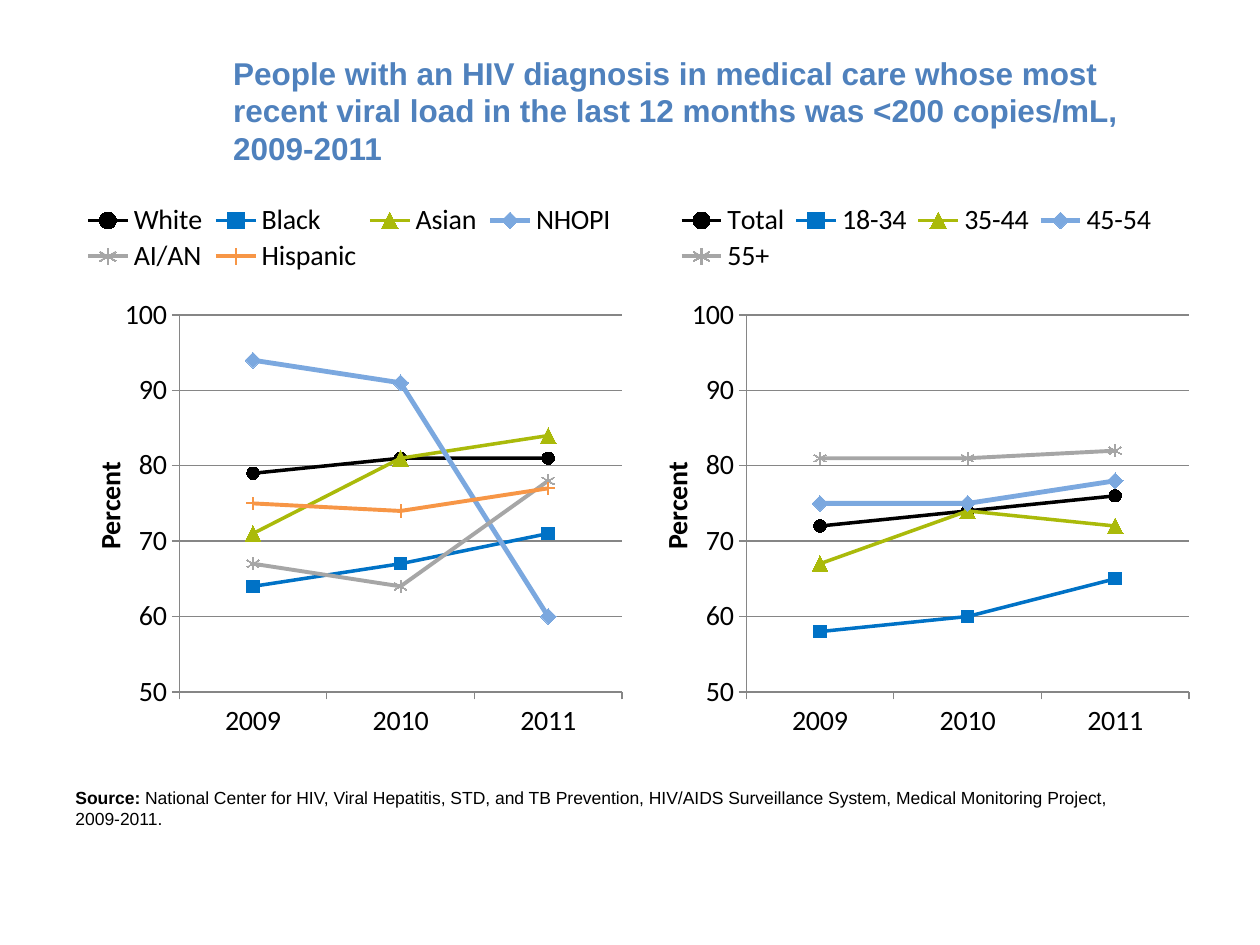
from dataclasses import dataclass
from typing import NamedTuple

import pptx
import pptx.chart.data
import pptx.dml.color
import pptx.enum.chart
import pptx.enum.text
import pptx.oxml
import pptx.oxml.ns
import pptx.util

EMU_PER_PX = 9144  # 100 px to the inch
YEARS = ["2009", "2010", "2011"]
AXIS_FONT = {"name": "Calibri", "size": pptx.util.Pt(16), "bold": False}
MARKER = pptx.enum.chart.XL_MARKER_STYLE


class Box(NamedTuple):
    x: int
    y: int
    w: int
    h: int


class SeriesStyle(NamedTuple):
    color: str
    width: float
    marker: MARKER
    size: int
    filled: bool = True


@dataclass
class LinePanel:
    box: Box
    legend: dict[str, float]
    series: dict[str, list[int]]


STYLES = [
    SeriesStyle("000000", 2, MARKER.CIRCLE, 7),
    SeriesStyle("0072C6", 2, MARKER.SQUARE, 7),
    SeriesStyle("AABA0A", 2, MARKER.TRIANGLE, 9),
    SeriesStyle("7BA8DF", 2.75, MARKER.DIAMOND, 9),
    SeriesStyle("A6A6A6", 2.25, MARKER.STAR, 7, False),
    SeriesStyle("F79646", 2.25, MARKER.PLUS, 7, False),
]

PANELS = [
    LinePanel(
        Box(50, 160, 450, 450),
        {"x": 0.02, "y": 0, "w": 0.97, "h": 0.13},
        {
            "White": [79, 81, 81],
            "Black": [64, 67, 71],
            "Asian": [71, 81, 84],
            "NHOPI": [94, 91, 60],
            "AI/AN": [67, 64, 78],
            "Hispanic": [75, 74, 77],
        },
    ),
    LinePanel(
        Box(500, 160, 450, 450),
        {"x": 0.07, "y": 0, "w": 0.87, "h": 0.13},
        {
            "Total": [72, 74, 76],
            "18-34": [58, 60, 65],
            "35-44": [67, 74, 72],
            "45-54": [75, 75, 78],
            "55+": [81, 81, 82],
        },
    ),
]


def px(n: int) -> int:
    return pptx.util.Emu(n * EMU_PER_PX)


def rgb(color: str) -> pptx.dml.color.RGBColor:
    return pptx.dml.color.RGBColor.from_string(color)


def set_attrs(obj, values: dict) -> None:
    for name, value in values.items():
        setattr(obj, name, value)


def set_font(font, values: dict, color: str = "000000") -> None:
    set_attrs(font, values)
    font.color.rgb = rgb(color)


def set_line(line, color: str, width: float) -> None:
    line.color.rgb = rgb(color)
    line.width = pptx.util.Pt(width)


def place(sp, box: Box) -> None:
    set_attrs(sp, dict(zip(("left", "top", "width", "height"), map(px, box))))


def set_layout(element, index: int, fractions: dict, inner: bool = False) -> None:
    """Position a chart part by fractions of the chart area."""
    for old in element.findall(pptx.oxml.ns.qn("c:layout")):
        element.remove(old)
    modes = "".join(f'<c:{k}Mode val="edge"/>' for k in "xy")
    values = "".join(f'<c:{k} val="{v}"/>' for k, v in fractions.items())
    target = '<c:layoutTarget val="inner"/>' if inner else ""
    element.insert(index, pptx.oxml.parse_xml(
        f'<c:layout {pptx.oxml.ns.nsdecls("c")}><c:manualLayout>'
        f"{target}{modes}{values}</c:manualLayout></c:layout>"))


def style_series(series, style: SeriesStyle) -> None:
    series.smooth = False
    set_line(series.format.line, style.color, style.width)
    marker = series.marker
    set_attrs(marker, {"style": style.marker, "size": style.size})
    set_line(marker.format.line, style.color, 0.75)
    if style.filled:
        marker.format.fill.solid()
        marker.format.fill.fore_color.rgb = rgb(style.color)
    else:
        marker.format.fill.background()


def style_axes(chart) -> None:
    for axis in (chart.category_axis, chart.value_axis):
        axis.major_tick_mark = pptx.enum.chart.XL_TICK_MARK.OUTSIDE
        set_font(axis.tick_labels.font, AXIS_FONT)
        set_line(axis.format.line, "868686", 0.75)
    axis = chart.value_axis
    set_attrs(axis, {"minimum_scale": 50, "maximum_scale": 100,
                     "major_unit": 10, "has_major_gridlines": True})
    set_line(axis.major_gridlines.format.line, "868686", 0.75)
    set_attrs(axis.tick_labels, {"number_format": "0",
                                 "number_format_is_linked": False})
    p = axis.axis_title.text_frame.paragraphs[0]
    r = p.add_run()
    r.text = "Percent"
    set_font(r.font, AXIS_FONT | {"bold": True})
    set_layout(axis.axis_title._element, 1, {"x": 0.04, "y": 0.45})


def add_line_panel(s, panel: LinePanel) -> None:
    data = pptx.chart.data.CategoryChartData(number_format="0")
    data.categories = YEARS
    for name, values in panel.series.items():
        data.add_series(name, values)
    chart = s.shapes.add_chart(pptx.enum.chart.XL_CHART_TYPE.LINE_MARKERS,
                               *map(px, panel.box), data).chart
    set_attrs(chart, {"has_title": False, "has_legend": True})
    set_font(chart.font, {"name": "Arial", "size": pptx.util.Pt(10)})
    chart.plots[0].vary_by_categories = False
    for series, style in zip(chart.plots[0].series, STYLES):
        style_series(series, style)
    style_axes(chart)

    # Legend and plot area
    legend = chart.legend
    set_attrs(legend, {"position": pptx.enum.chart.XL_LEGEND_POSITION.TOP,
                       "include_in_layout": False})
    set_font(legend.font, AXIS_FONT)
    set_layout(legend._element, 1, panel.legend)
    set_layout(chart._chartSpace.chart.plotArea, 0,
               {"x": 0.205, "y": 0.2, "w": 0.781, "h": 0.665}, inner=True)


def add_title(s) -> None:
    sp = s.shapes.title
    place(sp, Box(175, 50, 775, 75))
    tf = sp.text_frame
    set_attrs(tf, {"word_wrap": True,
                   "auto_size": pptx.enum.text.MSO_AUTO_SIZE.NONE,
                   "vertical_anchor": pptx.enum.text.MSO_ANCHOR.MIDDLE})
    p = tf.paragraphs[0]
    p.alignment = pptx.enum.text.PP_ALIGN.LEFT
    r = p.add_run()
    r.text = ("People with an HIV diagnosis in medical care whose most recent "
              "viral load in the last 12 months was <200 copies/mL, 2009-2011")
    set_font(r.font, {"name": "Arial", "size": pptx.util.Pt(18), "bold": True},
             "4F81BD")


def add_source(s) -> None:
    tf = s.shapes.add_textbox(*map(px, Box(50, 620, 858, 44))).text_frame
    set_attrs(tf, {"word_wrap": True,
                   "auto_size": pptx.enum.text.MSO_AUTO_SIZE.SHAPE_TO_FIT_TEXT})
    runs = [("Source: ", True),
            ("National Center for HIV, Viral Hepatitis, STD, and TB Prevention, "
             "HIV/AIDS Surveillance System, Medical Monitoring Project, "
             "2009-2011.", False)]
    for text, bold in runs:
        r = tf.paragraphs[0].add_run()
        r.text = text
        set_font(r.font, {"name": "Arial", "size": pptx.util.Pt(10), "bold": bold})


def main() -> None:
    prs = pptx.Presentation()
    set_attrs(prs, {"slide_width": px(1000), "slide_height": px(750)})
    s = prs.slides.add_slide(prs.slide_layouts[5])
    add_title(s)
    for panel in PANELS:
        add_line_panel(s, panel)
    add_source(s)
    prs.save("out.pptx")


if __name__ == "__main__":
    main()
